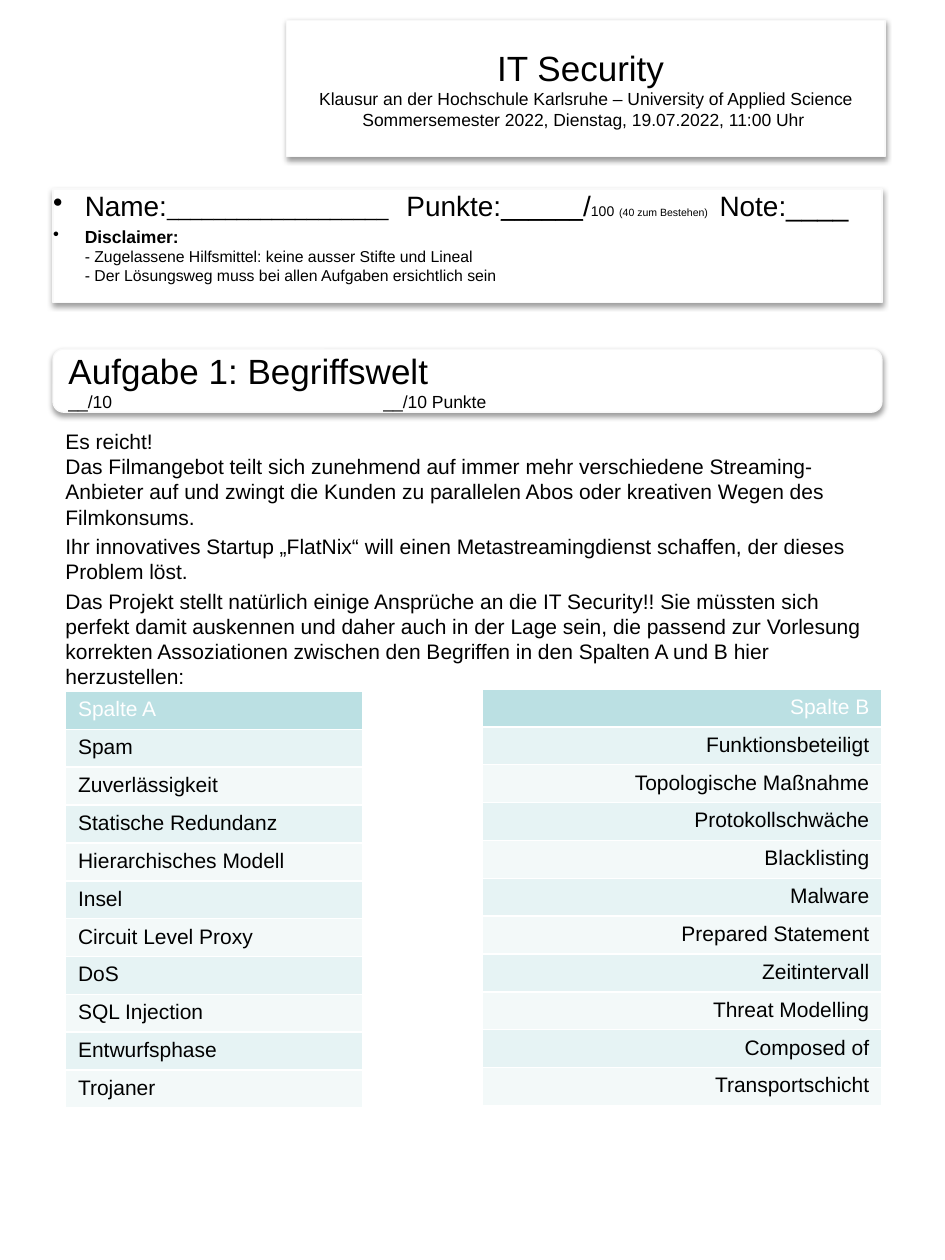
from copy import deepcopy
from lxml import etree
from pptx import Presentation
from pptx import util as u
from pptx.dml import color
from pptx.enum import shapes, text
from pptx.oxml import ns

FONT = "Arial"
BLACK, WHITE, EDGE = "000000", "FFFFFF", "F9F9F9"
HEADER, BANDS = "BBE0E3", ("E6F3F4", "F3F9F9")
LEFT, RIGHT, CENTER = text.PP_ALIGN.LEFT, text.PP_ALIGN.RIGHT, text.PP_ALIGN.CENTER
TOP, MIDDLE = text.MSO_ANCHOR.TOP, text.MSO_ANCHOR.MIDDLE
PADDING = (0.25, 0.13)

TITLE = [[
    ("IT Security \n", {"size": 20}),
    ("Klausur an der Hochschule Karlsruhe – University of Applied Science "
     "Sommersemester 2022, Dienstag, 19.07.2022, 11:00 Uhr ", {"size": 10}),
]]
NAME_LINE = [
    ("Name:", {"size": 16}),
    ("___________________", {"size": 12}),
    (" ", {"size": 12, "spacing": 6.7}),
    ("Punkte:", {"size": 16}),
    ("______", {"size": 14, "underline": True}),
    ("/", {"size": 16}),
    ("100", {"size": 8}),
    (" ", {"size": 10}),
    ("(40 zum Bestehen)", {"size": 6}),
    (" ", {"size": 6, "spacing": 5}),
    ("Note:____", {"size": 16}),
]
DISCLAIMER = [
    ("Disclaimer:\n", {"size": 10, "bold": True}),
    ("- Zugelassene Hilfsmittel: keine ausser Stifte und Lineal\n"
     "- Der Lösungsweg muss bei allen Aufgaben ersichtlich sein", {"size": 9}),
]
TASK = [
    [("Aufgabe 1: Begriffswelt", {"size": 20})],
    [("__/10\t\t\t\t\t__/10 Punkte", {"size": 10})],
]
STORY = [
    "Es reicht! \nDas Filmangebot teilt sich zunehmend auf immer mehr verschiedene "
    "Streaming-Anbieter auf und zwingt die Kunden zu parallelen Abos oder kreativen "
    "Wegen des Filmkonsums.",
    "Ihr innovatives Startup „FlatNix“ will einen Metastreamingdienst schaffen, "
    "der dieses Problem löst.",
    "Das Projekt stellt natürlich einige Ansprüche an die IT Security!! Sie müssten "
    "sich perfekt damit auskennen und daher auch in der Lage sein, die passend zur "
    "Vorlesung korrekten Assoziationen zwischen den Begriffen in den Spalten A und B "
    "hier herzustellen:",
]
COLUMN_A = ["Spalte A", "Spam", "Zuverlässigkeit", "Statische Redundanz",
            "Hierarchisches Modell", "Insel", "Circuit Level Proxy", "DoS",
            "SQL Injection", "Entwurfsphase", "Trojaner"]
COLUMN_B = ["Spalte B", "Funktionsbeteiligt", "Topologische Maßnahme",
            "Protokollschwäche", "Blacklisting", "Malware", "Prepared Statement",
            "Zeitintervall", "Threat Modelling", "Composed of", "Transportschicht"]


def rgb(value):
    """Turn a hex string into a colour."""
    return color.RGBColor.from_string(value)


def add_xml(parent, tag, **attributes):
    """Append a DrawingML element to a parent and return it."""
    return etree.SubElement(parent, ns.qn(tag), attributes)


def style_span(span, size, ink=BLACK, bold=False, underline=False, spacing=0):
    """Set the look of one run."""
    font = span.font
    font.name, font.size, font.bold = FONT, u.Pt(size), bold
    font.underline = underline
    font.color.rgb = rgb(ink)
    if spacing:
        span._r.get_or_add_rPr().set("spc", str(round(spacing * 100)))


def write_spans(para, spans):
    """Write styled runs, turning newlines into line breaks of the same size."""
    for words, style in spans:
        for index, line in enumerate(words.split("\n")):
            if index:
                para.add_line_break()
                para._p[-1].append(deepcopy(para.runs[-1]._r.rPr))
            if line:
                span = para.add_run()
                span.text = line
                style_span(span, **style)


def write_paragraphs(frame, paragraphs, align=LEFT, before=0, bullet=False):
    """Fill a text frame with paragraphs of styled runs."""
    for index, spans in enumerate(paragraphs):
        para = frame.add_paragraph() if index else frame.paragraphs[0]
        para.alignment = align
        if bullet:
            properties = para._p.get_or_add_pPr()
            hang = u.Cm(0.64)
            properties.set("marL", str(hang))
            properties.set("indent", str(-hang))
            add_xml(properties, "a:buChar", char="•")
        if index and before:
            para.space_before = u.Pt(before)
        write_spans(para, spans)


def set_frame(frame, padding, anchor):
    """Set wrapping, margins and anchoring of a text frame."""
    frame.word_wrap = True
    frame.margin_left = frame.margin_right = u.Cm(padding[0])
    frame.margin_top = frame.margin_bottom = u.Cm(padding[1])
    frame.vertical_anchor = anchor


def add_card(page, kind, place, padding=(0, 0), anchor=MIDDLE):
    """Add a white card with a soft shadow and return its text frame."""
    card = page.shapes.add_shape(kind, *map(u.Cm, place))
    card.fill.solid()
    card.fill.fore_color.rgb = rgb(WHITE)
    card.line.color.rgb = rgb(EDGE)
    card.line.width = u.Pt(0.75)
    card.shadow.inherit = False
    effects = card._element.spPr.find(ns.qn("a:effectLst"))
    shadow = add_xml(effects, "a:outerShdw", blurRad="40000", dist="20000",
                     dir="5400000", rotWithShape="0")
    add_xml(add_xml(shadow, "a:srgbClr", val=BLACK), "a:alpha", val="38000")
    set_frame(card.text_frame, padding, anchor)
    return card.text_frame


def add_story(page, place):
    """Add the introduction to the task."""
    frame = page.shapes.add_textbox(*map(u.Cm, place)).text_frame
    set_frame(frame, PADDING, TOP)
    frame.auto_size = text.MSO_AUTO_SIZE.SHAPE_TO_FIT_TEXT
    write_paragraphs(frame, [[(words, {"size": 12})] for words in STORY], before=2.4)


def add_terms(page, left, top, width, terms, align):
    """Add a banded one-column table of terms with a header."""
    row_height = u.Cm(0.76)
    table = page.shapes.add_table(len(terms), 1, u.Cm(left), u.Cm(top), u.Cm(width),
                                  row_height * len(terms)).table
    for index, term in enumerate(terms):
        table.rows[index].height = row_height
        cell = table.cell(index, 0)
        properties = cell._tc.get_or_add_tcPr()
        for side in "LRTB":
            line = add_xml(properties, f"a:ln{side}", w=str(u.Pt(0.96)))
            add_xml(add_xml(line, "a:solidFill"), "a:srgbClr", val=WHITE)
        cell.fill.solid()
        cell.fill.fore_color.rgb = rgb(BANDS[(index - 1) % 2] if index else HEADER)
        ink = BLACK if index else WHITE
        write_paragraphs(cell.text_frame, [[(term, {"size": 12, "ink": ink})]], align)


def main():
    """Build the exam page and save it."""
    deck = Presentation()
    deck.slide_width, deck.slide_height = u.Cm(19.05), u.Cm(25.4)
    page = deck.slides.add_slide(deck.slide_layouts[6])
    kinds = shapes.MSO_SHAPE
    left, width = 1.07, 16.71

    title = add_card(page, kinds.RECTANGLE, (5.77, 0.41, 12.07, 2.74))
    write_paragraphs(title, TITLE, CENTER)
    info = add_card(page, kinds.RECTANGLE, (left, 3.81, width, 2.29), anchor=TOP)
    write_paragraphs(info, [NAME_LINE, DISCLAIMER], before=2, bullet=True)
    task = add_card(page, kinds.ROUNDED_RECTANGLE, (left, 7.04, width, 1.27), PADDING)
    write_paragraphs(task, TASK)
    add_story(page, (left, 8.51, width, 5.49))
    add_terms(page, 1.32, 13.94, 5.99, COLUMN_A, LEFT)
    add_terms(page, 9.73, 13.89, 8.05, COLUMN_B, RIGHT)
    deck.save("out.pptx")


if __name__ == "__main__":
    main()
